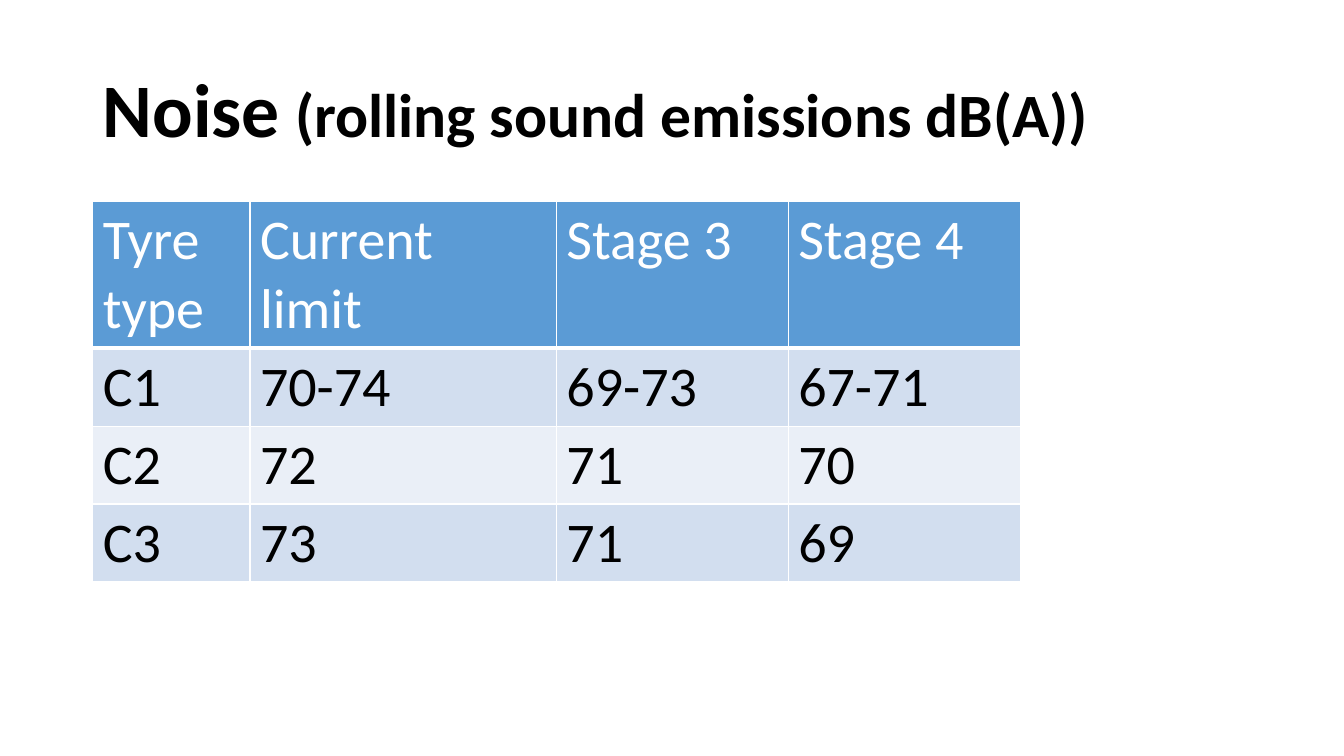
from lxml.etree import SubElement
from pptx import Presentation
from pptx.dml.color import RGBColor as Color
from pptx.enum.text import MSO_ANCHOR as Anchor
from pptx.oxml.ns import qn
from pptx.util import Inches, Pt

COLORS = {
    "text": "000000",
    "white": "FFFFFF",
    "header": "5B9BD5",
    "odd": "D2DEEF",
    "even": "EAEFF7",
}
TITLE = [("Noise", 54), (" ", 48), ("(rolling sound emissions dB(A))", 44)]
LIMITS = [
    ["Tyre type", "Current limit", "Stage 3", "Stage 4"],
    ["C1", "70-74", "69-73", "67-71"],
    ["C2", "72", "71", "70"],
    ["C3", "73", "71", "69"],
]
COLUMN_SHARES = [11.7, 22.8, 17.25, 17.33]
ROW_SHARES = [19.4] + [10.3] * 3


class NoiseSlide:
    font_name = "Calibri"
    table_size = 40

    def __init__(self, deck):
        self.width, self.height = deck.slide_width, deck.slide_height
        self.page = deck.slides.add_slide(deck.slide_layouts[6])

    def across(self, percent):
        return int(self.width * percent / 100)

    def down(self, percent):
        return int(self.height * percent / 100)

    def area(self, left, top, width, height):
        return self.across(left), self.down(top), self.across(width), self.down(height)

    def add_span(self, para, text, size, color, bold=False):
        span = para.add_run()
        span.text = text
        formats = {"name": self.font_name, "size": Pt(size), "bold": bold}
        for name, value in formats.items():
            setattr(span.font, name, value)
        span.font.color.rgb = Color.from_string(COLORS[color])

    def title(self, spans, *shares):
        box = self.page.shapes.add_textbox(*self.area(*shares))
        formats = {"word_wrap": True, "vertical_anchor": Anchor.MIDDLE}
        for name, value in formats.items():
            setattr(box.text_frame, name, value)
        para = box.text_frame.paragraphs[0]
        para.line_spacing = 0.9
        for text, size in spans:
            self.add_span(para, text, size, "text", bold=True)

    def border(self, cell, bottom):
        properties = cell._tc.get_or_add_tcPr()
        widths = {"lnL": 1, "lnR": 1, "lnT": 1, "lnB": bottom}
        for index, (side, width) in enumerate(widths.items()):
            line = SubElement(properties, qn(f"a:{side}"), w=str(Pt(width)))
            fill = SubElement(line, qn("a:solidFill"))
            SubElement(fill, qn("a:srgbClr"), val=COLORS["white"])
            properties.insert(index, line)

    def table(self, rows, left, top, columns, heights):
        shares = left, top, sum(columns), sum(heights)
        frame = self.page.shapes.add_table(len(rows), len(columns), *self.area(*shares))
        grid = frame.table
        for column, share in zip(grid.columns, columns):
            column.width = self.across(share)
        for row, share in zip(grid.rows, heights):
            row.height = self.down(share)
        for row_index, row in enumerate(rows):
            is_header = row_index == 0
            shade = "header" if is_header else "odd" if row_index % 2 else "even"
            for column_index, text in enumerate(row):
                cell = grid.cell(row_index, column_index)
                cell.fill.solid()
                cell.fill.fore_color.rgb = Color.from_string(COLORS[shade])
                self.border(cell, 3 if is_header else 1)
                para = cell.text_frame.paragraphs[0]
                self.add_span(para, text, self.table_size, "white" if is_header else "text")


def main():
    deck = Presentation()
    deck.slide_width, deck.slide_height = Inches(13.33), Inches(7.5)
    slide = NoiseSlide(deck)
    slide.title(TITLE, 6.9, 5.33, 86.25, 19.33)
    slide.table(LIMITS, 6.9, 26.67, COLUMN_SHARES, ROW_SHARES)
    deck.save("out.pptx")


if __name__ == "__main__":
    main()
